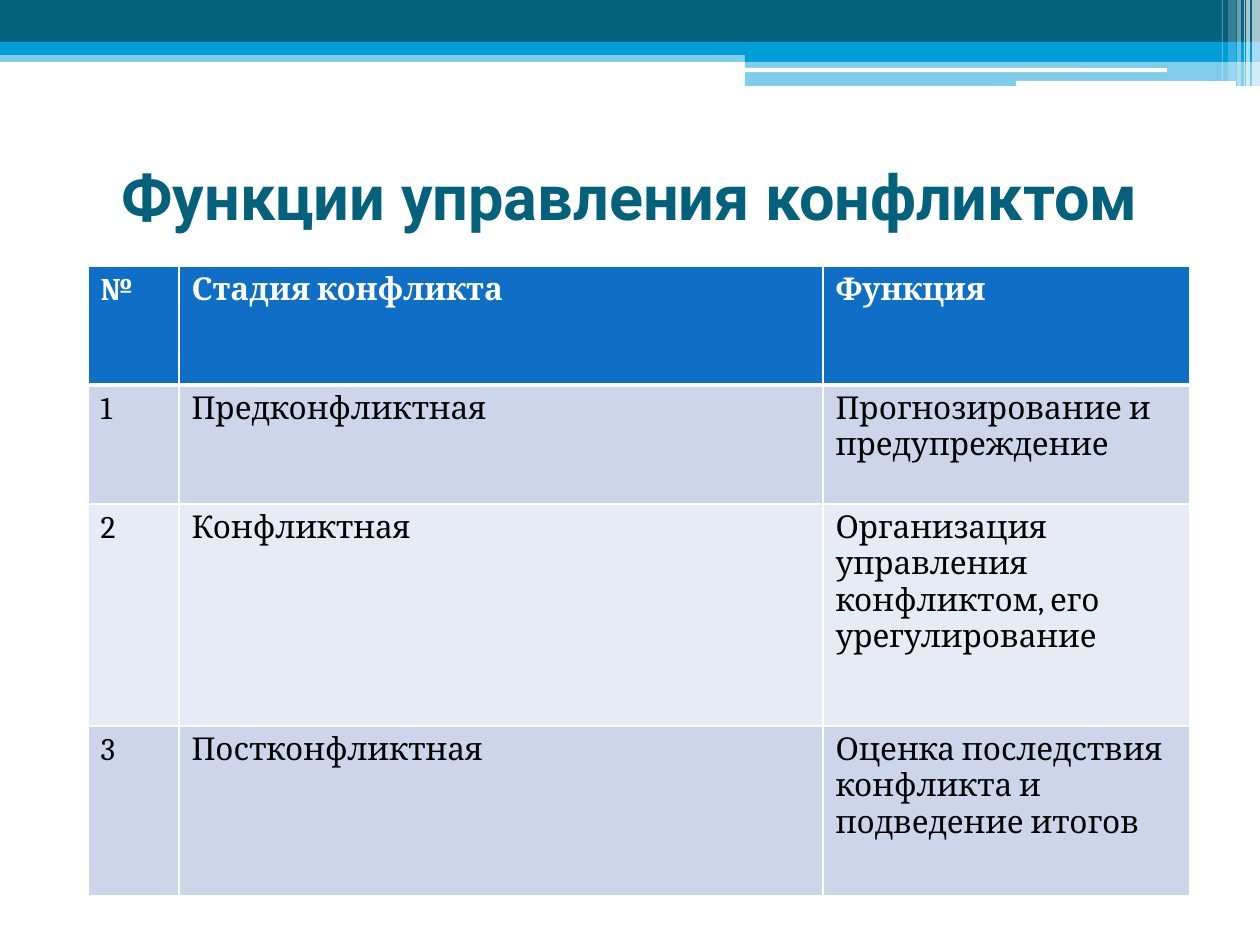
"""Builds the slide on the functions of conflict management."""
from lxml import etree
from pptx import Presentation
from pptx.dml.color import RGBColor
from pptx.enum.shapes import MSO_SHAPE
from pptx.enum.text import MSO_ANCHOR, PP_ALIGN
from pptx.oxml.ns import qn
from pptx.util import Pt

RECT = MSO_SHAPE.RECTANGLE
ROUNDED = MSO_SHAPE.ROUNDED_RECTANGLE
TOP = MSO_ANCHOR.TOP
CENTER = PP_ALIGN.CENTER

TEAL = RGBColor(0x04, 0x61, 0x7B)
SKY = RGBColor(0x00, 0x9D, 0xD9)
BLUE = RGBColor(0x0F, 0x6F, 0xC6)
BAND_DARK = RGBColor(0xCC, 0xD5, 0xEA)
BAND_LIGHT = RGBColor(0xE7, 0xEB, 0xF5)
WHITE = RGBColor(0xFF, 0xFF, 0xFF)
BLACK = RGBColor(0x00, 0x00, 0x00)

BANDS = [
    (0, 50, 1260, 12, SKY, 50),
    (0, 0, 1260, 42, TEAL, 100),
    (0, 42, 1260, 13, SKY, 100),
    (745, 49, 515, 13, SKY, 100),
    (745, 61, 515, 25, SKY, 50),
]
WHITE_BARS = [(745, 68, 422, 4), (1016, 81, 220, 5)]
STRIPES = [
    (1252, 8, 86, 65),
    (1246, 4, 86, 65),
    (1244, 1, 86, 60),
    (1237, 4, 86, 40),
    (1228, 8, 81, 20),
    (1222, 1, 81, 30),
]
COLUMNS = [91, 644, 367]
ROW_HEIGHTS = [119, 119, 222, 170]
STAGES = [
    ("№", "Стадия конфликта", "Функция"),
    ("1", "Предконфликтная", "Прогнозирование и предупреждение"),
    ("2", "Конфликтная", "Организация управления конфликтом, его урегулирование"),
    ("3", "Постконфликтная", "Оценка последствия конфликта и подведение итогов"),
]


def px(n):
    return round(n * 914400 / 126)


class Deck:
    title_font = "Roboto"
    table_font = "Cambria"

    def __init__(self, width, height):
        self.prs = Presentation()
        self.prs.slide_width, self.prs.slide_height = px(width), px(height)
        self.slide = self.prs.slides.add_slide(self.prs.slide_layouts[6])

    def box(self, x, y, w, h, color, opacity=100, kind=RECT):
        s = self.slide.shapes.add_shape(kind, px(x), px(y), px(w), px(h))
        s.shadow.inherit = False
        s.line.fill.background()
        s.fill.solid()
        s.fill.fore_color.rgb = color
        if opacity < 100:
            clr = s.element.spPr.find(qn("a:solidFill")).find(qn("a:srgbClr"))
            etree.SubElement(clr, qn("a:alpha"), val=str(opacity * 1000))

    def style(self, p, name, size, color, bold):
        p.font.name, p.font.size = name, Pt(size)
        p.font.color.rgb, p.font.bold = color, bold

    def title(self, x, y, w, h, text):
        tf = self.slide.shapes.add_textbox(px(x), px(y), px(w), px(h)).text_frame
        tf.word_wrap = True
        tf.vertical_anchor = TOP
        tf.margin_top = 0
        p = tf.paragraphs[0]
        p.text, p.alignment = text, CENTER
        self.style(p, self.title_font, 36, TEAL, True)

    def borders(self, cell, widths):
        tc_pr = cell._tc.get_or_add_tcPr()
        for side, width in zip("LRTB", widths):
            ln = etree.SubElement(tc_pr, qn(f"a:ln{side}"), w=str(Pt(width)))
            fill = etree.SubElement(ln, qn("a:solidFill"))
            etree.SubElement(fill, qn("a:srgbClr"), val=str(WHITE))

    def table(self, x, y, columns, heights, rows):
        table = self.slide.shapes.add_table(
            len(rows), len(columns), px(x), px(y), px(sum(columns)), px(sum(heights))
        ).table
        for column, width in zip(table.columns, columns):
            column.width = px(width)
        for i, (height, row) in enumerate(zip(heights, rows)):
            table.rows[i].height = px(height)
            header = i == 0
            color = BLUE if header else BAND_DARK if i % 2 else BAND_LIGHT
            for j, text in enumerate(row):
                cell = table.cell(i, j)
                self.borders(cell, (1, 1, 3 if i == 1 else 1, 3 if header else 1))
                cell.fill.solid()
                cell.fill.fore_color.rgb = color
                p = cell.text_frame.paragraphs[0]
                p.text = text
                self.style(p, self.table_font, 18, WHITE if header else BLACK, header)


def main():
    deck = Deck(1260, 945)
    for band in BANDS:
        deck.box(*band)
    for bar in WHITE_BARS:
        deck.box(*bar, WHITE, kind=ROUNDED)
    for x, w, h, opacity in STRIPES:
        deck.box(x, 0, w, h, WHITE, opacity)
    deck.title(63, 157, 1134, 147, "Функции управления конфликтом")
    deck.table(88, 266, COLUMNS, ROW_HEIGHTS, STAGES)
    deck.prs.save("out.pptx")


if __name__ == "__main__":
    main()
